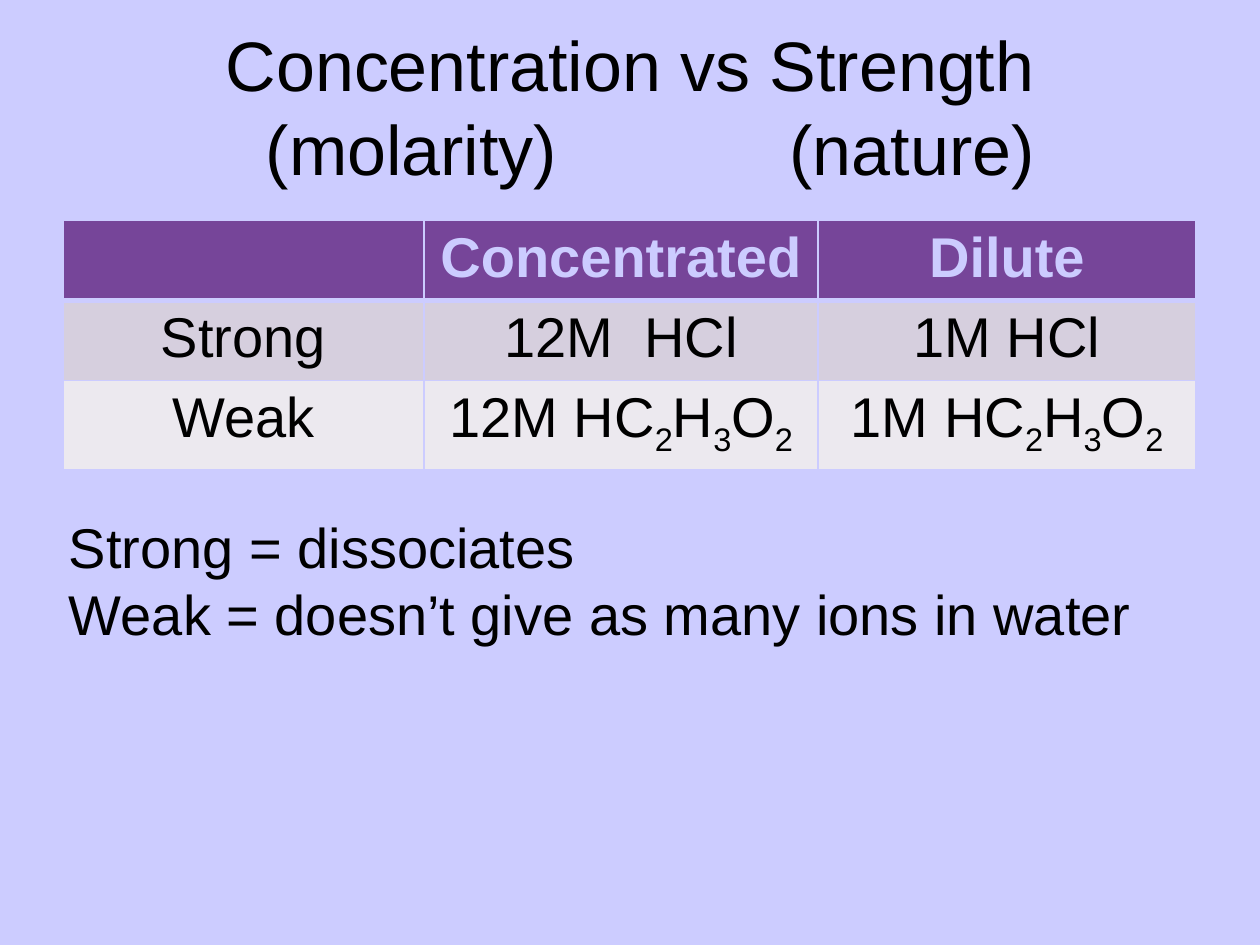
from lxml import etree
from pptx import Presentation
from pptx.dml import color
from pptx.enum import text
from pptx.oxml import ns
from pptx.util import Cm, Pt

PALE, DARK, INK = "CCCCFF", "764599", "000000"
BANDS = [DARK, "D6CFDE", "ECE9EF"]
ACID = ["HC", "2", "H", "3", "O", "2"]
ROWS = [
    [[], ["Concentrated"], ["Dilute"]],
    [["Strong"], ["12M  HCl"], ["1M HCl"]],
    [["Weak"], ["12M " + ACID[0], *ACID[1:]], ["1M " + ACID[0], *ACID[1:]]],
]


def rgb(code):
    return color.RGBColor.from_string(code)


def style(font, size, ink, bold=False):
    looks = {"name": "Arial", "size": Pt(size), "bold": bold}
    for key, val in looks.items():
        setattr(font, key, val)
    font.color.rgb = rgb(ink)


def tabs(para, stops):
    props = para._p.get_or_add_pPr()
    group = etree.SubElement(props, ns.qn("a:tabLst"))
    for stop in stops:
        etree.SubElement(group, ns.qn("a:tab"), pos=str(Cm(stop)), algn="l")


def frame(slide, box, anchor):
    body = slide.shapes.add_textbox(*map(Cm, box)).text_frame
    looks = {"word_wrap": True, "vertical_anchor": anchor}
    for key, val in looks.items():
        setattr(body, key, val)
    return body


def title(slide, box):
    body = frame(slide, box, text.MSO_ANCHOR.BOTTOM)
    head, sub = body.paragraphs[0], body.add_paragraph()
    head.alignment = text.PP_ALIGN.CENTER
    sub.alignment = text.PP_ALIGN.LEFT
    tabs(sub, [3.84, 14.4])
    for para, words in [(head, "Concentration vs Strength"),
                        (sub, "\t(molarity)\t(nature)")]:
        run = para.add_run()
        run.text = words
        style(run.font, 40, INK)


def edges(cell, base):
    props = cell._tc.get_or_add_tcPr()
    for side, width in {"L": 1, "R": 1, "T": 1, "B": base}.items():
        line = etree.SubElement(props, ns.qn("a:ln" + side), w=str(Pt(width)))
        fill = etree.SubElement(line, ns.qn("a:solidFill"))
        etree.SubElement(fill, ns.qn("a:srgbClr"), val=PALE)


def fill(cell, parts, band, top):
    edges(cell, 3 if top else 1)
    cell.fill.solid()
    cell.fill.fore_color.rgb = rgb(band)
    para = cell.text_frame.paragraphs[0]
    para.alignment = text.PP_ALIGN.CENTER
    for part in parts:
        run = para.add_run()
        run.text = part
        style(run.font, 32, PALE if top else INK, top)
        if part.isdigit():
            run._r.get_or_add_rPr().set("baseline", "-25000")


def grid(slide, box):
    table = slide.shapes.add_table(3, 3, *map(Cm, box)).table
    for col, width in zip(table.columns, [7.28, 7.94, 7.62]):
        col.width = Cm(width)
    for row, high in zip(table.rows, [1.5, 1.53, 1.67]):
        row.height = Cm(high)
    for r, (row, band) in enumerate(zip(ROWS, BANDS)):
        for c, parts in enumerate(row):
            fill(table.cell(r, c), parts, band, r == 0)


def notes(slide, box):
    body = frame(slide, box, text.MSO_ANCHOR.TOP)
    body.text = "Strong = dissociates\nWeak = doesn’t give as many ions in water"
    for para in body.paragraphs:
        style(para.font, 32, INK)


def main():
    deck = Presentation()
    deck.slide_width, deck.slide_height = Cm(25.4), Cm(19.05)
    slide = deck.slides.add_slide(deck.slide_layouts[6])
    slide.background.fill.solid()
    slide.background.fill.fore_color.rgb = rgb(PALE)
    title(slide, (1.27, 0.76, 22.86, 3.18))
    grid(slide, (1.27, 4.45, 22.84, 4.7))
    notes(slide, (1.14, 10.21, 23.27, 3))
    deck.save("out.pptx")


if __name__ == "__main__":
    main()
